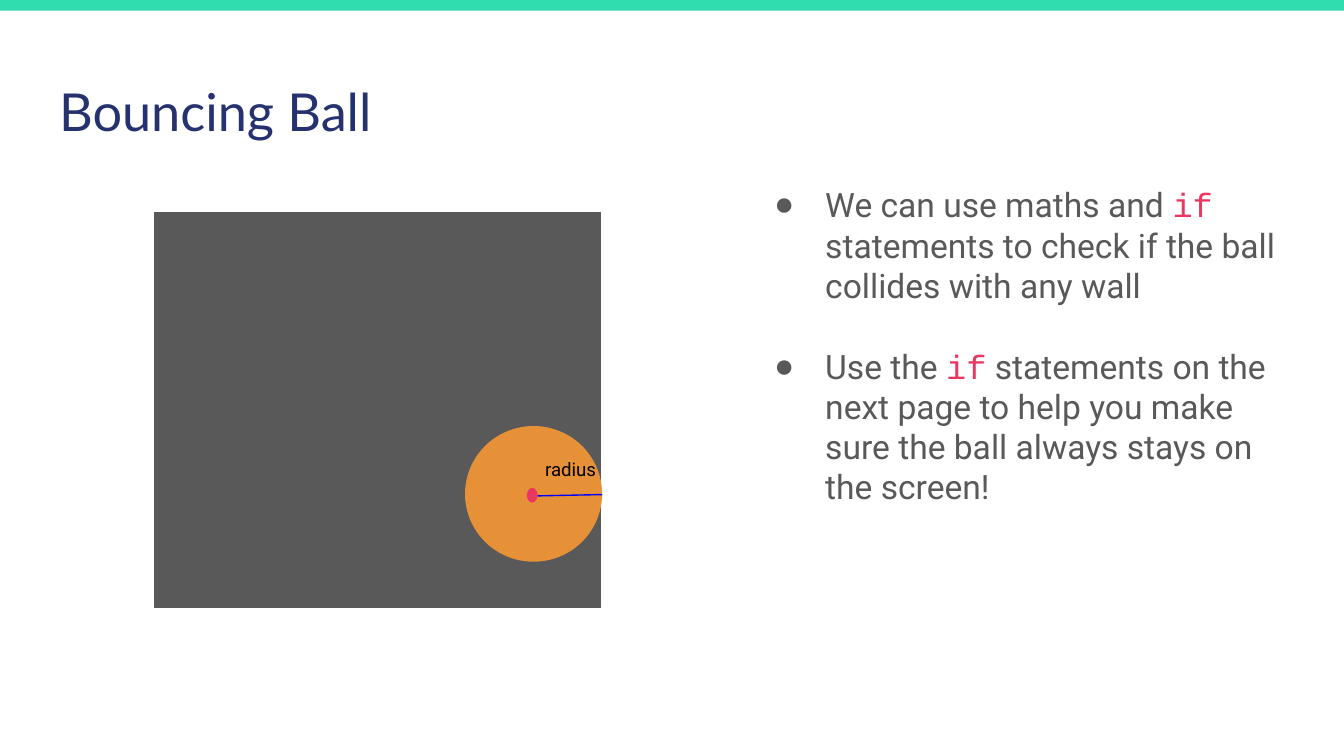
from dataclasses import dataclass
from typing import NamedTuple

from lxml.etree import SubElement
from pptx import Presentation
from pptx.dml.color import RGBColor
from pptx.enum.shapes import MSO_CONNECTOR as Connector, MSO_SHAPE as Preset
from pptx.enum.text import MSO_ANCHOR as Anchor, MSO_AUTO_SIZE as AutoSize, PP_ALIGN as Align
from pptx.oxml.ns import qn
from pptx.util import Inches, Pt


@dataclass(frozen=True)
class Theme:
    """Colours, fonts and type sizes of the slide."""
    accent: str = "30DDAE"
    navy: str = "25326F"
    grey: str = "595959"
    ball: str = "E69138"
    pink: str = "E93761"
    blue: str = "0000FF"
    black: str = "000000"
    title_font: str = "Lato"
    body_font: str = "Roboto"
    code_font: str = "Courier New"
    title_size: float = 28
    body_size: float = 18
    label_size: float = 10
    bullet_gap: float = 21.6
    line_width: float = 0.75


class Box(NamedTuple):
    """A rectangle in inches."""
    left: float
    top: float
    width: float
    height: float

    def inner(self, left, top, width, height):
        """Return a box placed relative to this one."""
        return Box(self.left + left, self.top + top, width, height)

    def lengths(self):
        """Return the four measures as slide lengths."""
        return [Inches(measure) for measure in self]


THEME = Theme()


def add_text(paragraph, text, font=THEME.body_font, size=THEME.body_size, color=THEME.grey):
    """Append a formatted run to a paragraph."""
    run = paragraph.add_run()
    run.text = text
    run.font.name = font
    run.font.size = Pt(size)
    run.font.color.rgb = RGBColor.from_string(color)


def prepare_frame(holder, box):
    """Place a text holder and return its evenly inset frame."""
    holder.left, holder.top, holder.width, holder.height = box.lengths()
    frame = holder.text_frame
    frame.word_wrap = True
    frame.auto_size = AutoSize.NONE
    frame.vertical_anchor = Anchor.TOP
    frame.margin_left = frame.margin_right = Inches(0.1)
    frame.margin_top = frame.margin_bottom = Inches(0.1)
    return frame


def add_solid(slide, preset, box, color, outlined=False):
    """Add a flat preset shape in one colour."""
    solid = slide.shapes.add_shape(preset, *box.lengths())
    solid.shadow.inherit = False
    solid.fill.solid()
    solid.fill.fore_color.rgb = RGBColor.from_string(color)
    if outlined:
        solid.line.color.rgb = RGBColor.from_string(color)
        solid.line.width = Pt(THEME.line_width)
    else:
        solid.line.fill.background()


def add_title(slide, box):
    """Fill the title placeholder."""
    heading = prepare_frame(slide.shapes.title, box).paragraphs[0]
    heading.alignment = Align.LEFT
    add_text(heading, "Bouncing Ball", font=THEME.title_font,
             size=THEME.title_size, color=THEME.navy)


def add_bullet(paragraph):
    """Give a paragraph a hanging round bullet."""
    properties = paragraph._p.get_or_add_pPr()
    properties.set("marL", str(Inches(0.5)))
    properties.set("indent", str(Inches(-0.38)))
    bullet_color = SubElement(properties, qn("a:buClr"))
    SubElement(bullet_color, qn("a:srgbClr"), val=THEME.grey)
    SubElement(properties, qn("a:buChar"), char="●")


def add_advice(slide, box):
    """Fill the body placeholder with the collision advice."""
    advice = [
        ("We can use maths and ", " statements to check if the ball collides with any wall"),
        ("Use the ", " statements on the next page to help you make sure "
                     "the ball always stays on the screen!"),
    ]
    frame = prepare_frame(slide.placeholders[1], box)
    for index, (opening, ending) in enumerate(advice):
        point = frame.add_paragraph() if index else frame.paragraphs[0]
        point.alignment = Align.LEFT
        point.space_before = Pt(THEME.bullet_gap if index else 0)
        add_bullet(point)
        add_text(point, opening)
        add_text(point, "if", font=THEME.code_font, color=THEME.pink)
        add_text(point, ending)


def add_ball(slide, box):
    """Draw the ball with its centre, radius line and label."""
    add_solid(slide, Preset.OVAL, box, THEME.ball)
    add_solid(slide, Preset.OVAL, box.inner(0.46, 0.46, 0.08, 0.11), THEME.pink)
    start = box.inner(0.54, 0.52, 0, 0)
    end = box.inner(box.width, 0.51, 0, 0)
    radius = slide.shapes.add_connector(
        Connector.STRAIGHT, *start.lengths()[:2], *end.lengths()[:2])
    radius.line.color.rgb = RGBColor.from_string(THEME.blue)
    radius.line.width = Pt(THEME.line_width)
    SubElement(radius._element.spPr, qn("a:effectLst"))
    label_box = box.inner(0.41, 0.14, 0.75, 0.37)
    label = prepare_frame(slide.shapes.add_textbox(*label_box.lengths()), label_box).paragraphs[0]
    label.alignment = Align.CENTER
    add_text(label, "radius", size=THEME.label_size, color=THEME.black)


def add_screen(slide, box):
    """Draw the screen with the ball touching its right wall."""
    add_solid(slide, Preset.RECTANGLE, box, THEME.grey, outlined=True)
    add_ball(slide, box.inner(2.31, 1.59, 1.02, 1.01))


def build_slide(deck, box):
    """Compose the bouncing ball slide."""
    slide = deck.slides.add_slide(deck.slide_layouts[1])
    add_solid(slide, Preset.RECTANGLE, box.inner(-0.01, 0, box.width + 0.02, 0.08), THEME.accent)
    add_screen(slide, box.inner(1.15, 1.58, 3.32, 2.94))
    add_title(slide, box.inner(0.34, 0.49, 9.32, 0.63))
    add_advice(slide, box.inner(5.54, 1.27, 4.12, 2.93))


def main():
    """Build and save the deck."""
    deck = Presentation()
    page = Box(0, 0, 10, 10 * 9 / 16)
    deck.slide_width, deck.slide_height = Inches(page.width), Inches(page.height)
    build_slide(deck, page)
    deck.save("out.pptx")


if __name__ == "__main__":
    main()
